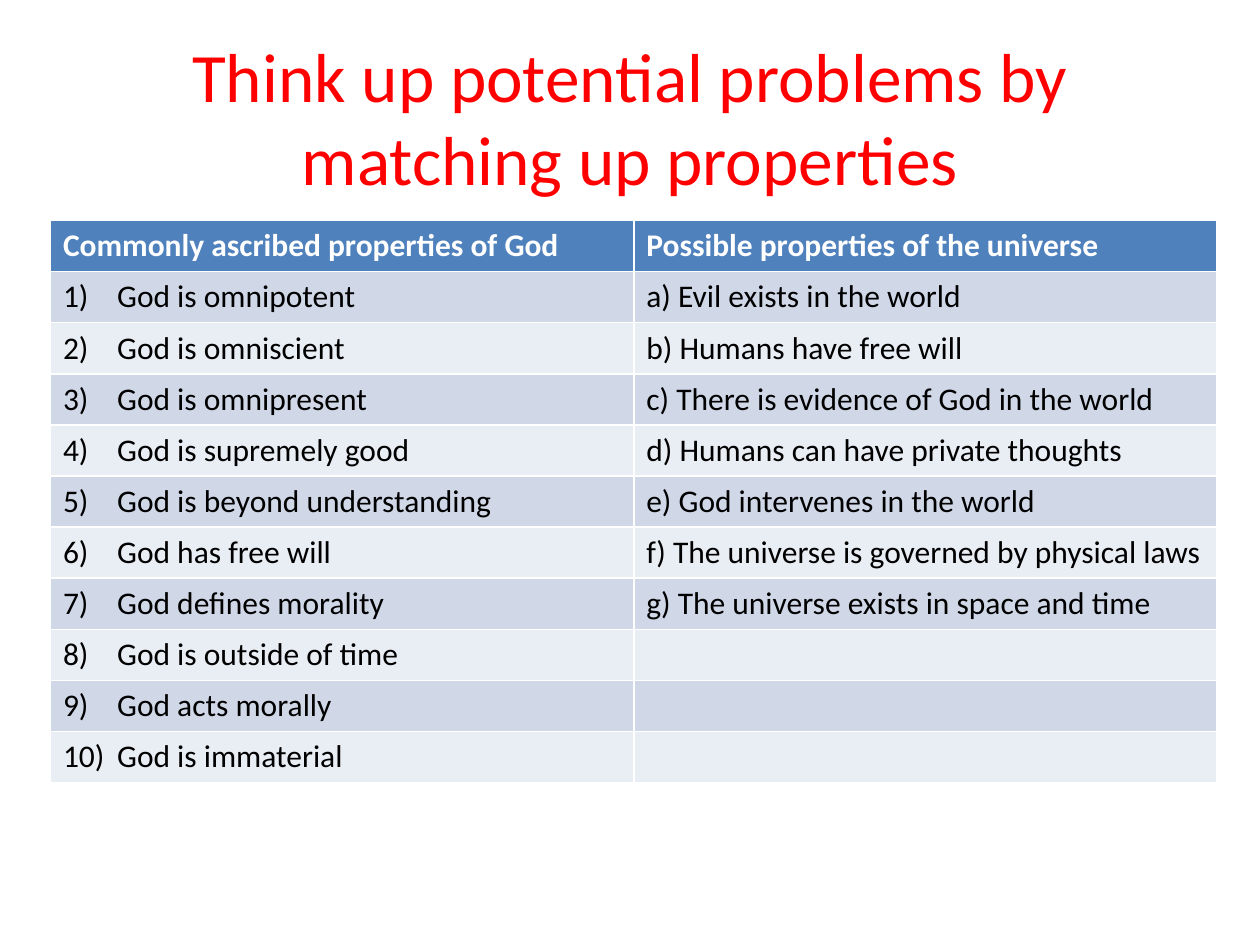
"""Build a slide that pairs properties of God with properties of the universe."""
from pptx import Presentation
from pptx import util as u
from pptx.dml.color import RGBColor
from pptx.enum import text
from pptx.oxml.ns import qn
from lxml import etree
from itertools import zip_longest

TITLE = "Think up potential problems by matching up properties"
HEADINGS = ("Commonly ascribed properties of God", "Possible properties of the universe")
GOD = [
    "God is omnipotent",
    "God is omniscient",
    "God is omnipresent",
    "God is supremely good",
    "God is beyond understanding",
    "God has free will",
    "God defines morality",
    "God is outside of time",
    "God acts morally",
    "God is immaterial",
]
UNIVERSE = [
    "a) Evil exists in the world",
    "b) Humans have free will",
    "c) There is evidence of God in the world",
    "d) Humans can have private thoughts",
    "e) God intervenes in the world",
    "f) The universe is governed by physical laws",
    "g) The universe exists in space and time",
]
COLORS = {"title": "FF0000", "heading": "FFFFFF", "body": "000000",
          "header": "4F81BD", "odd": "D0D8E8", "even": "E9EDF4"}
LEFT, TOP, WIDTH, HEIGHT = 0.4, 1.75, 9.26, 4.46
INDENT = 0.43


def write(frame, words, *, size=18, color="body", bold=False, align=None, number=None):
    """Put formatted words in a text frame, numbered on request."""
    paragraph = frame.paragraphs[0]
    paragraph.alignment = align
    run = paragraph.add_run()
    run.text = words
    run.font.name, run.font.size, run.font.bold = "Calibri", u.Pt(size), bold
    run.font.color.rgb = RGBColor.from_string(COLORS[color])
    if number:
        properties = paragraph._p.get_or_add_pPr()
        properties.set("marL", str(u.Inches(INDENT)))
        properties.set("indent", str(-u.Inches(INDENT)))
        etree.SubElement(properties, qn("a:buFont"), typeface="+mj-lt")
        etree.SubElement(properties, qn("a:buAutoNum"), type="arabicParenR", startAt=str(number))


def main():
    """Lay out the title and the table, then save."""
    deck = Presentation()
    deck.slide_width, deck.slide_height = u.Inches(10), u.Inches(7.5)
    slide = deck.slides.add_slide(deck.slide_layouts[5])

    title = slide.shapes.title
    title.left, title.top, title.width, title.height = map(u.Inches, (0.5, 0.3, 9, 1.25))
    title.text_frame.vertical_anchor = text.MSO_ANCHOR.MIDDLE
    write(title.text_frame, TITLE, size=39.6, color="title", align=text.PP_ALIGN.CENTER)

    rows = [HEADINGS, *zip_longest(GOD, UNIVERSE, fillvalue="")]
    box = map(u.Inches, (LEFT, TOP, WIDTH, HEIGHT))
    properties = slide.shapes.add_table(len(rows), len(HEADINGS), *box).table
    for r, row in enumerate(rows):
        band = "header" if r == 0 else "odd" if r % 2 else "even"
        for c, words in enumerate(row):
            cell = properties.cell(r, c)
            cell.fill.solid()
            cell.fill.fore_color.rgb = RGBColor.from_string(COLORS[band])
            if words:
                write(cell.text_frame, words, color="body" if r else "heading",
                      bold=r == 0, number=r if c == 0 else None)

    deck.save("out.pptx")


if __name__ == "__main__":
    main()
